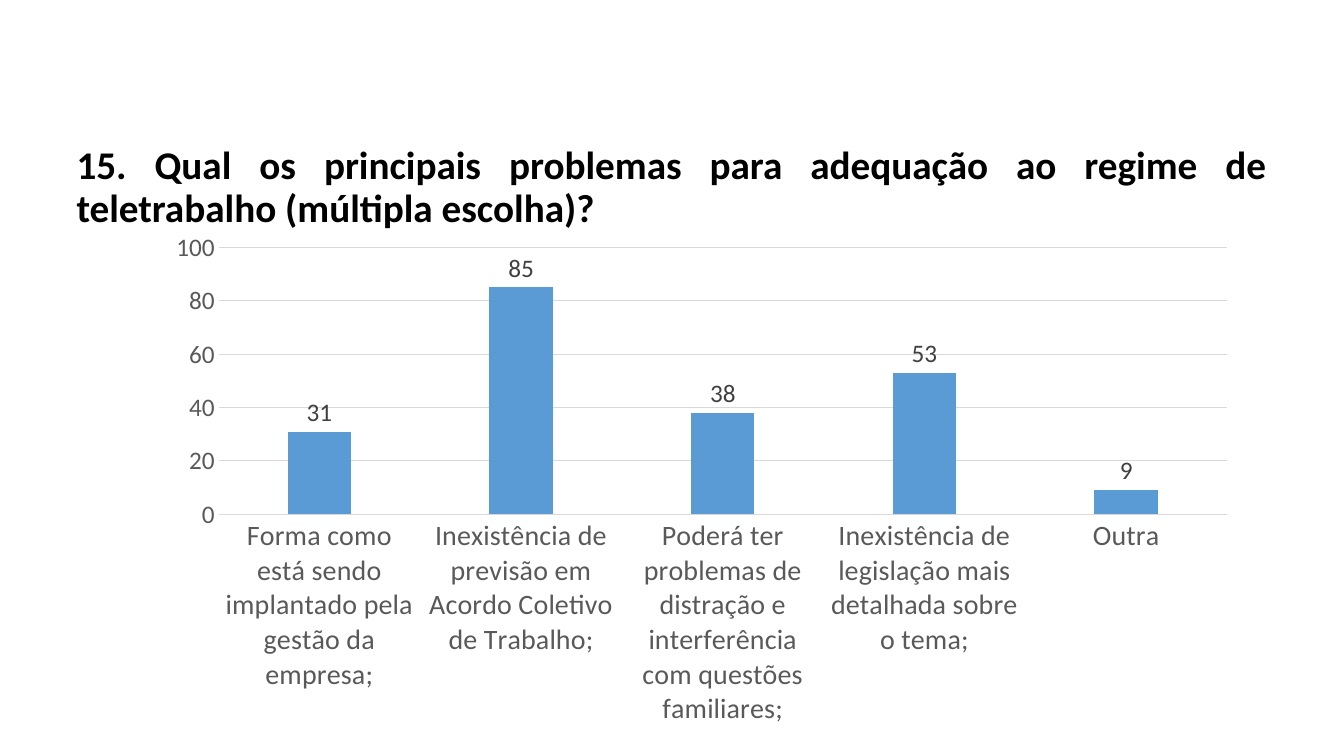
from lxml import etree
from pptx import Presentation
from pptx.chart.data import CategoryChartData
from pptx.dml.color import RGBColor
from pptx.enum import chart as ch, text as tx
from pptx.oxml.ns import qn
from pptx.util import Cm, Pt

# Content
TITLE = ("15. Qual os principais problemas para adequação ao regime de "
         "teletrabalho (múltipla escolha)?")
VOTES = {
    "Forma como está sendo implantado pela gestão da empresa;": 31,
    "Inexistência de previsão em Acordo Coletivo de Trabalho;": 85,
    "Poderá ter problemas de distração e interferência com questões familiares;": 38,
    "Inexistência de legislação mais detalhada sobre o tema;": 53,
    "Outra": 9,
}
PLOT = {"x": 0.1, "y": 0.04, "w": 0.88, "h": 0.52}

FACE = "Calibri"
BLACK = RGBColor(0x00, 0x00, 0x00)
DARK = RGBColor(0x40, 0x40, 0x40)
GREY = RGBColor(0x59, 0x59, 0x59)
PALE = RGBColor(0xD9, 0xD9, 0xD9)
BLUE = RGBColor(0x5B, 0x9B, 0xD5)


def style(font, size, color, bold=False):
    font.name, font.size, font.bold = FACE, Pt(size), bold
    font.color.rgb = color


def add_text(slide, words, box, size=28, color=BLACK, bold=False,
             align=tx.PP_ALIGN.LEFT, anchor=tx.MSO_ANCHOR.TOP, space=1.0):
    frame = slide.shapes.add_textbox(*box).text_frame
    frame.word_wrap = True
    frame.vertical_anchor = anchor
    par = frame.paragraphs[0]
    par.alignment, par.line_spacing = align, space
    run = par.add_run()
    run.text = words
    style(run.font, size, color, bold)


def rule(line):
    line.color.rgb = PALE
    line.width = Pt(0.75)


def place_plot(chart):
    area = chart.plots[0]._element.getparent()
    for old in area.findall(qn("c:layout")):
        area.remove(old)
    layout = etree.Element(qn("c:layout"))
    area.insert(0, layout)
    manual = etree.SubElement(layout, qn("c:manualLayout"))
    parts = {"layoutTarget": "inner", "xMode": "edge", "yMode": "edge", **PLOT}
    for tag, val in parts.items():
        etree.SubElement(manual, qn("c:" + tag)).set("val", str(val))


def add_bars(slide, box):
    data = CategoryChartData()
    data.categories = list(VOTES)
    data.add_series("Series 1", list(VOTES.values()))
    kind = ch.XL_CHART_TYPE.COLUMN_CLUSTERED
    chart = slide.shapes.add_chart(kind, *box, data).chart
    chart.has_legend = chart.has_title = False
    style(chart.font, 10, BLACK)
    place_plot(chart)

    # Bars and their values
    plot = chart.plots[0]
    plot.vary_by_categories = False
    plot.gap_width, plot.overlap = 219, -27
    fill = plot.series[0].format.fill
    fill.solid()
    fill.fore_color.rgb = BLUE
    labels = plot.series[0].data_labels
    labels.show_value = True
    labels.position = ch.XL_LABEL_POSITION.OUTSIDE_END
    style(labels.font, 18, DARK)

    # Axes
    cats, vals = chart.category_axis, chart.value_axis
    for axis, size in ((cats, 20), (vals, 18)):
        axis.major_tick_mark = axis.minor_tick_mark = ch.XL_TICK_MARK.NONE
        style(axis.tick_labels.font, size, GREY)
    rule(cats.format.line)
    vals.format.line.fill.background()
    vals.minimum_scale, vals.maximum_scale, vals.major_unit = 0, 100, 20
    vals.has_major_gridlines = True
    rule(vals.major_gridlines.format.line)


def main():
    deck = Presentation()
    deck.slide_width, deck.slide_height = Cm(33.87), Cm(19.05)
    slide = deck.slides.add_slide(deck.slide_layouts[6])
    add_text(slide, TITLE, (Cm(1.68), Cm(3.58), Cm(30.48), Cm(2.36)),
             bold=True, align=tx.PP_ALIGN.JUSTIFY,
             anchor=tx.MSO_ANCHOR.BOTTOM, space=0.9)
    add_bars(slide, (Cm(2.62), Cm(5.72), Cm(28.88), Cm(12.93)))
    deck.save("out.pptx")


if __name__ == "__main__":
    main()
